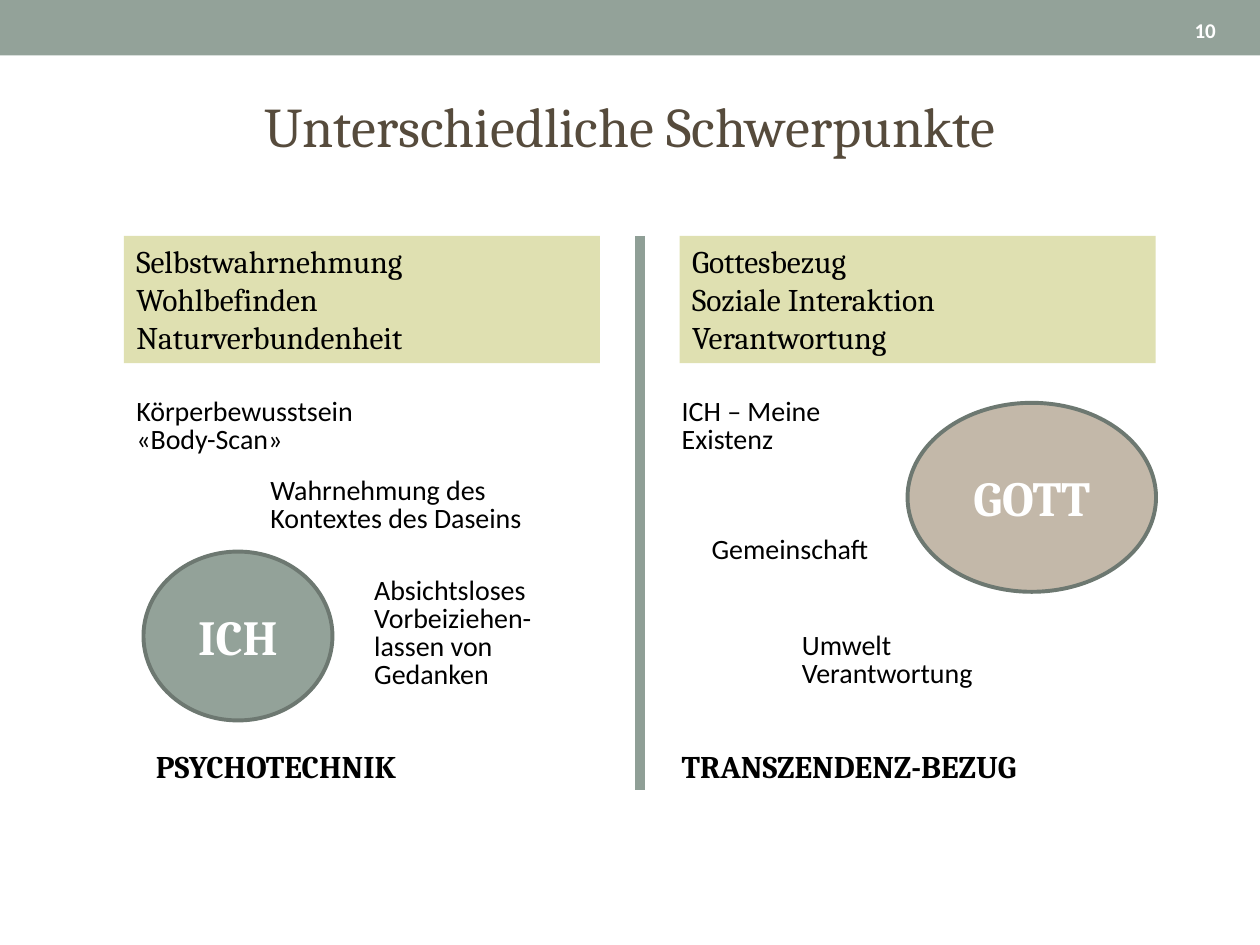
from pptx import Presentation
from pptx.dml.color import RGBColor
from pptx.enum.shapes import MSO_CONNECTOR, MSO_SHAPE
from pptx.enum.text import MSO_ANCHOR as Anchor, PP_ALIGN as Align
from pptx.oxml.ns import qn
from pptx.util import Pt
from lxml.etree import SubElement

SAGE = RGBColor(0x93, 0xA2, 0x99)
DIVIDER = RGBColor(0x8F, 0x9F, 0x96)
OUTLINE = RGBColor(0x6D, 0x78, 0x71)
SAND = RGBColor(0xC3, 0xB8, 0xA9)
LIME = RGBColor(0xDF, 0xE0, 0xB1)
BROWN = RGBColor(0x56, 0x4B, 0x3C)
BLACK = RGBColor(0, 0, 0)
WHITE = RGBColor(0xFF, 0xFF, 0xFF)
SERIF, SANS = "Cambria", "Calibri"


class Builder:
    def __init__(self, page):
        self.page = page

    def fill_text(self, shape, text, font, size, color=BLACK, bold=False,
                  align=Align.LEFT, anchor=Anchor.TOP, spacing=None):
        frame = shape.text_frame
        frame.text = text
        frame.word_wrap = True
        frame.vertical_anchor = anchor
        for para in frame.paragraphs:
            para.alignment = align
            if spacing:
                para.line_spacing = Pt(spacing)
            for span in para.runs:
                span.font.name = font
                span.font.size = Pt(size)
                span.font.bold = bold
                span.font.color.rgb = color

    def title(self, text, *bounds):
        shape = self.page.shapes.title
        shape.left, shape.top, shape.width, shape.height = map(Pt, bounds)
        self.fill_text(shape, text, SERIF, 32, BROWN,
                       align=Align.CENTER, anchor=Anchor.MIDDLE)

    def shape(self, kind, fill, *bounds):
        shape = self.page.shapes.add_shape(kind, *map(Pt, bounds))
        shape.shadow.inherit = False
        shape.fill.solid()
        shape.fill.fore_color.rgb = fill
        shape.line.fill.background()
        return shape

    def circle(self, text, fill, *bounds):
        shape = self.shape(MSO_SHAPE.OVAL, fill, *bounds)
        shape.line.color.rgb = OUTLINE
        shape.line.width = Pt(2.25)
        self.fill_text(shape, text, SERIF, 28, WHITE, True,
                       Align.CENTER, Anchor.MIDDLE)

    def panel(self, text, *bounds):
        shape = self.shape(MSO_SHAPE.RECTANGLE, LIME, *bounds)
        self.fill_text(shape, text, SERIF, 18)

    def text(self, text, bounds, font, size, **style):
        box = self.page.shapes.add_textbox(*map(Pt, bounds))
        self.fill_text(box, text, font, size, **style)
        return box

    def note(self, text, *bounds):
        self.text(text, bounds, SANS, 16, spacing=16)

    def caption(self, text, *bounds):
        self.text(text, bounds, SERIF, 18, bold=True)

    def page_number(self, text, *bounds):
        box = self.text(text, bounds, SANS, 12, color=WHITE, bold=True,
                        anchor=Anchor.MIDDLE)
        box.text_frame.margin_left = Pt(2.2)
        box.text_frame.margin_right = Pt(3.6)

    def divider(self, x, top, bottom):
        line = self.page.shapes.add_connector(
            MSO_CONNECTOR.STRAIGHT, Pt(x), Pt(top), Pt(x), Pt(bottom))
        line.line.color.rgb = DIVIDER
        line.line.width = Pt(6)
        SubElement(line._element.spPr, qn("a:effectLst"))


def main():
    deck = Presentation()
    deck.slide_width, deck.slide_height = Pt(720), Pt(540)
    builder = Builder(deck.slides.add_slide(deck.slide_layouts[5]))

    builder.shape(MSO_SHAPE.RECTANGLE, SAGE, -14.4, -8, 765.4, 39.6)
    builder.title("Unterschiedliche Schwerpunkte", 36, 26, 648, 90.7)
    builder.page_number("10", 680.4, 3, 44, 28.8)
    builder.divider(365.8, 134.8, 451.4)

    # Left column: the self
    builder.panel("Selbstwahrnehmung\nWohlbefinden\nNaturverbundenheit",
                  70.8, 134.8, 272, 72.7)
    builder.circle("ICH", SAGE, 82, 315.2, 108, 96.5)
    builder.note("Körperbewusstsein\n«Body-Scan»", 70.8, 224.8, 204, 39.4)
    builder.note("Wahrnehmung des\vKontextes des Daseins",
                 147.4, 269.8, 204, 39.4)
    builder.note("Absichtsloses\vVorbeiziehen-lassen von Gedanken",
                 206.8, 327, 130.4, 72)
    builder.caption("PSYCHOTECHNIK", 82, 423.4, 249, 29)

    # Right column: God
    builder.panel("Gottesbezug\nSoziale Interaktion\nVerantwortung",
                  388.4, 134.8, 272, 72.7)
    builder.circle("GOTT", SAND, 518.6, 230.2, 142, 108)
    builder.note("ICH – Meine \vExistenz", 382.5, 224.8, 113, 39.4)
    builder.note("Gemeinschaft", 399.6, 303.2, 113, 23.5)
    builder.note("Umwelt\nVerantwortung", 451.2, 358.3, 113, 39.4)
    builder.caption("TRANSZENDENZ-BEZUG", 382.5, 423.4, 249, 29)

    deck.save("out.pptx")


if __name__ == "__main__":
    main()
